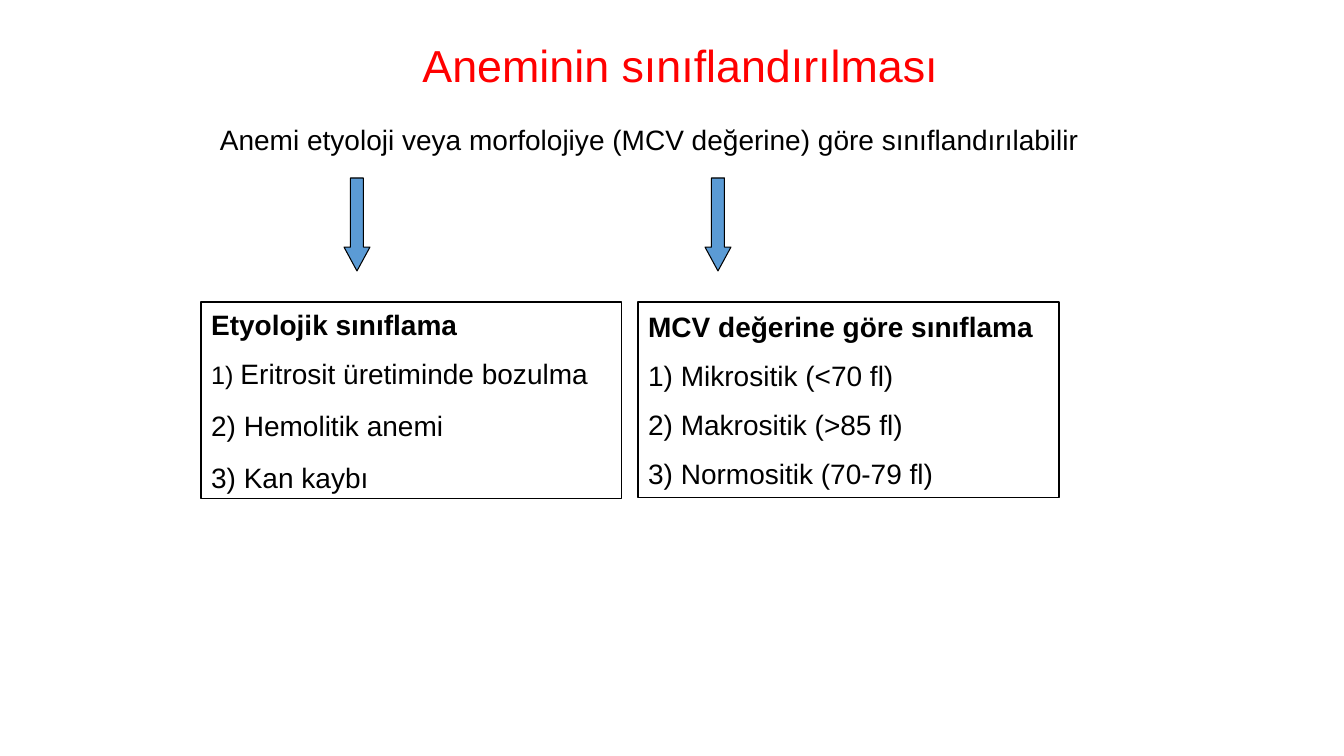
from pptx import Presentation
from pptx.dml.color import RGBColor
from pptx.enum.shapes import MSO_SHAPE
from pptx.enum.text import MSO_ANCHOR, MSO_AUTO_SIZE, PP_ALIGN
from pptx.oxml.ns import qn
from pptx.util import Pt

DOWN_ARROW = MSO_SHAPE.DOWN_ARROW
TOP, MIDDLE = MSO_ANCHOR.TOP, MSO_ANCHOR.MIDDLE
LEFT, CENTER = PP_ALIGN.LEFT, PP_ALIGN.CENTER
NO_AUTOFIT = MSO_AUTO_SIZE.NONE

TITLE = "Aneminin sınıflandırılması"
INTRO = "Anemi etyoloji veya morfolojiye (MCV değerine) göre sınıflandırılabilir"
BLACK, RED, BLUE = "000000", "FF0000", "5B9BD5"
FONT = "Arial"
TIGHT, WIDE = (11, 1), (1, 1.5)

CLASSES = [
    {
        "heading": "Etyolojik sınıflama",
        "items": [
            ([("1) ", 18), ("Eritrosit üretiminde bozulma", 20)], TIGHT),
            ([("2) Hemolitik anemi", 20)], WIDE),
            ([("3) Kan kaybı", 20)], WIDE),
        ],
        "box": (201, 302, 421, 197),
        "arrow_x": 344,
    },
    {
        "heading": "MCV değerine göre sınıflama",
        "items": [
            ([("1) Mikrositik (<70 fl)", 20)], TIGHT),
            ([("2) Makrositik (>85 fl)", 20)], TIGHT),
            ([("3) Normositik (70-79 fl)", 20)], TIGHT),
        ],
        "box": (638, 302, 421, 196),
        "arrow_x": 705,
    },
]

SCALE = 914400 / 100.8


def px(n):
    return round(n * SCALE)


def rgb(value):
    return RGBColor.from_string(value)


def place(sp, box):
    sp.left, sp.top, sp.width, sp.height = map(px, box)


def outline(sp):
    sp.line.color.rgb = rgb(BLACK)
    sp.line.width = Pt(0.75)


def frame(sp, anchor):
    tf = sp.text_frame
    tf.word_wrap = True
    tf.auto_size = NO_AUTOFIT
    tf.vertical_anchor = anchor
    return tf


def write(p, runs, color=BLACK, bold=False, align=LEFT, spacing=(0, 1)):
    p.alignment = align
    p.space_before, p.line_spacing = Pt(spacing[0]), spacing[1]
    for text, size in runs:
        r = p.add_run()
        r.text = text
        r.font.name = FONT
        r.font.size = Pt(size)
        r.font.bold = bold
        r.font.color.rgb = rgb(color)


def remove_bullet(p):
    pPr = p._p.get_or_add_pPr()
    pPr.set("marL", "0")
    pPr.set("indent", "0")
    pPr.append(pPr.makeelement(qn("a:buNone"), {}))


def fill_list(sp, group):
    place(sp, group["box"])
    outline(sp)
    tf = frame(sp, MIDDLE)
    write(tf.paragraphs[0], [(group["heading"], 20)], bold=True)
    for runs, spacing in group["items"]:
        write(tf.add_paragraph(), runs, spacing=spacing)
    for p in tf.paragraphs:
        remove_bullet(p)


def add_arrow(s, x):
    sp = s.shapes.add_shape(DOWN_ARROW, px(x), px(178), px(26), px(93))
    sp.shadow.inherit = False
    sp.adjustments[0], sp.adjustments[1] = 0.5, 0.92
    sp.fill.solid()
    sp.fill.fore_color.rgb = rgb(BLUE)
    outline(sp)


def main():
    prs = Presentation()
    prs.slide_width, prs.slide_height = px(1344), px(756)
    s = prs.slides.add_slide(prs.slide_layouts[3])

    title = s.shapes.title
    place(title, (210, 33, 941, 64))
    write(frame(title, TOP).paragraphs[0], [(TITLE, 32)], RED, align=CENTER)

    intro = s.shapes.add_textbox(px(210), px(118), px(941), px(44))
    write(frame(intro, TOP).paragraphs[0], [(INTRO, 20)])

    for idx, group in enumerate(CLASSES, start=1):
        fill_list(s.placeholders[idx], group)
        add_arrow(s, group["arrow_x"])

    prs.save("out.pptx")


if __name__ == "__main__":
    main()
